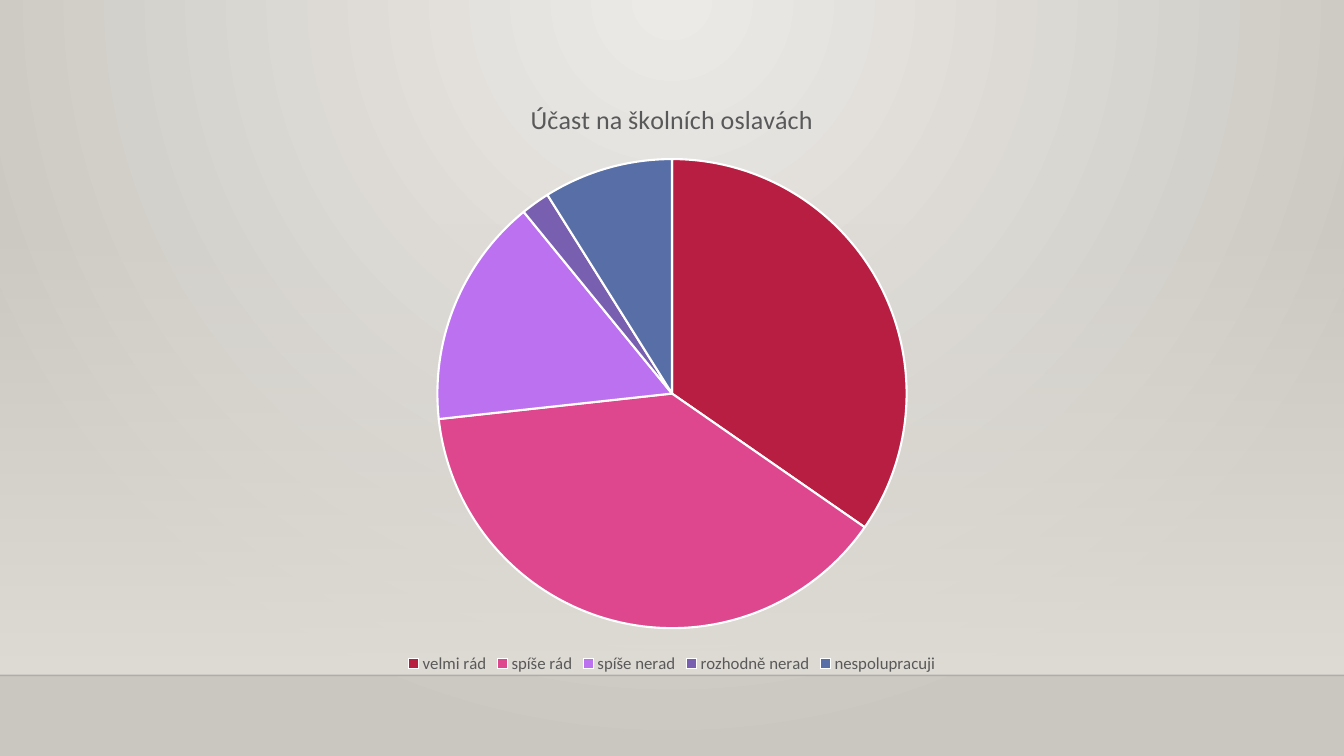
from dataclasses import dataclass

from lxml.etree import SubElement
from pptx import Presentation
from pptx.chart.data import CategoryChartData
from pptx.dml.color import RGBColor
from pptx.enum.chart import XL_CHART_TYPE, XL_LEGEND_POSITION
from pptx.enum.shapes import MSO_CONNECTOR, MSO_SHAPE
from pptx.oxml.ns import qn
from pptx.util import Inches, Pt


@dataclass(frozen=True)
class Theme:
    font: str = "Calibri"
    text: str = "595959"
    wall_light: str = "ECEAE7"
    wall_dark: str = "CAC7C1"
    glow: str = "DFDBD5"
    floor_edge: str = "000001"
    slice_border: str = "FFFFFF"
    slices: tuple = ("B71E42", "DE478E", "BC72F0", "795FAF", "586EA6")
    title_size: float = 18.6
    legend_size: float = 12
    base_size: float = 10


THEME = Theme()
CHART_TITLE = "Účast na školních oslavách"
ANSWERS = {
    "velmi rád": 35,
    "spíše rád": 39,
    "spíše nerad": 16,
    "rozhodně nerad": 2,
    "nespolupracuji": 9,
}


def add_alpha(color, percent):
    SubElement(color, qn("a:alpha"), val=str(percent * 1000))


def set_gradient(grad, stops):
    """Replace the stops and direction with (position, colour, opacity) stops."""
    for child in list(grad):
        grad.remove(child)
    stop_list = SubElement(grad, qn("a:gsLst"))
    for position, colour, opacity in stops:
        stop = SubElement(stop_list, qn("a:gs"), pos=str(position * 1000))
        color = SubElement(stop, qn("a:srgbClr"), val=colour)
        if opacity < 100:
            add_alpha(color, opacity)


def style_font(font, size):
    font.name = THEME.font
    font.size = Pt(size)
    font.bold = False
    font.color.rgb = RGBColor.from_string(THEME.text)


def add_backdrop(slide, width, height):
    # Wall lit from the top centre
    slide.background.fill.gradient()
    wall = slide.element.find(".//" + qn("a:gradFill"))
    set_gradient(wall, [(0, THEME.wall_light, 100), (100, THEME.wall_dark, 100)])
    light = SubElement(wall, qn("a:path"), {"path": "circle"})
    SubElement(light, qn("a:fillToRect"), l="43000", t="0", r="43000", b="100000")

    # Glow fading in towards the floor
    floor_top = Inches(6.7)
    glow_top = Inches(2.21)
    glow = slide.shapes.add_shape(
        MSO_SHAPE.RECTANGLE, 0, glow_top, width, floor_top - glow_top)
    glow.shadow.inherit = False
    glow.line.fill.background()
    glow.fill.gradient()
    glow_fill = glow.element.spPr.find(qn("a:gradFill"))
    set_gradient(glow_fill, [(0, THEME.glow, 0), (100, THEME.glow, 100)])
    SubElement(glow_fill, qn("a:lin"), ang="5400000", scaled="0")

    # Floor edge
    edge = slide.shapes.add_connector(
        MSO_CONNECTOR.STRAIGHT, 0, floor_top, width, floor_top)
    edge.line.width = Pt(1)
    edge.line.color.rgb = RGBColor.from_string(THEME.floor_edge)
    add_alpha(edge.element.spPr.find(".//" + qn("a:srgbClr")), 20)
    SubElement(edge.element.spPr, qn("a:effectLst"))


def add_answers_pie(slide, left, top, width, height):
    data = CategoryChartData()
    data.categories = list(ANSWERS)
    data.add_series(CHART_TITLE, list(ANSWERS.values()))
    chart = slide.shapes.add_chart(
        XL_CHART_TYPE.PIE, left, top, width, height, data).chart
    chart.font.name = THEME.font
    chart.font.size = Pt(THEME.base_size)

    # Title
    chart.has_title = True
    heading = chart.chart_title.text_frame
    heading.text = CHART_TITLE
    style_font(heading.paragraphs[0].font, THEME.title_size)
    chart.chart_title.include_in_layout = False

    # Legend
    chart.has_legend = True
    chart.legend.position = XL_LEGEND_POSITION.BOTTOM
    chart.legend.include_in_layout = False
    style_font(chart.legend.font, THEME.legend_size)

    # Slices
    pie = chart.plots[0]
    pie.vary_by_categories = True
    for index, colour in enumerate(THEME.slices):
        pie_slice = pie.series[0].points[index].format
        pie_slice.fill.solid()
        pie_slice.fill.fore_color.rgb = RGBColor.from_string(colour)
        pie_slice.line.width = Pt(1.5)
        pie_slice.line.color.rgb = RGBColor.from_string(THEME.slice_border)


def main():
    prs = Presentation()
    prs.slide_width, prs.slide_height = Inches(13.33), Inches(7.5)
    slide = prs.slides.add_slide(prs.slide_layouts[6])
    add_backdrop(slide, prs.slide_width, prs.slide_height)
    add_answers_pie(slide, Inches(2.22), Inches(0.79), Inches(8.89), Inches(5.93))
    prs.save("out.pptx")


if __name__ == "__main__":
    main()
